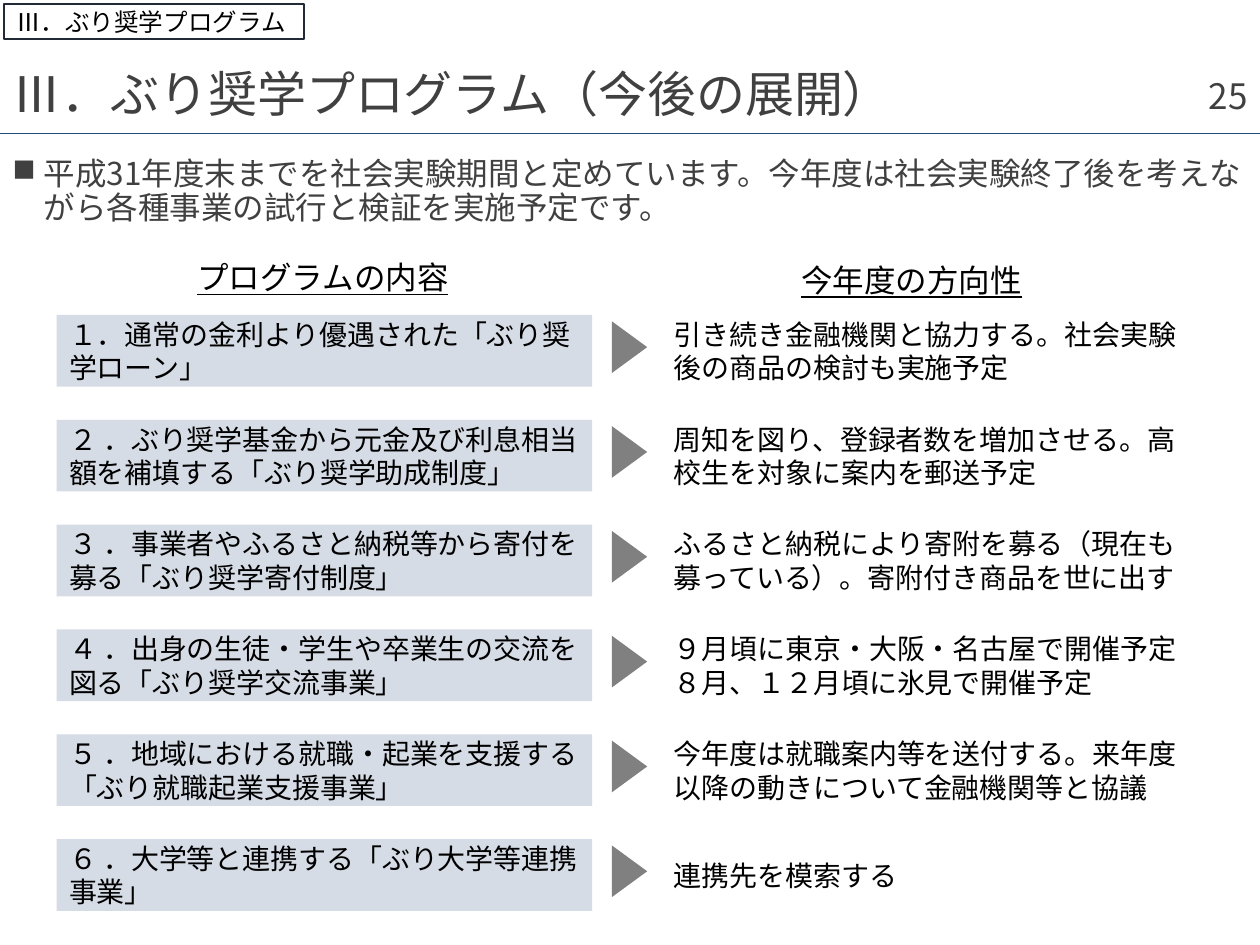
import pptx
import pptx.util
import pptx.dml.color
import pptx.enum.shapes
import pptx.enum.text
import pptx.oxml.ns
from lxml import etree

Pt = pptx.util.Pt
RGB = pptx.dml.color.RGBColor
Kind = pptx.enum.shapes.MSO_SHAPE
Align = pptx.enum.text.PP_ALIGN
Anchor = pptx.enum.text.MSO_ANCHOR
qn = pptx.oxml.ns.qn

FONT = "Noto Sans CJK JP"
BLACK = RGB(0x00, 0x00, 0x00)
WHITE = RGB(0xFF, 0xFF, 0xFF)
DARK = RGB(0x40, 0x40, 0x40)
GRAY = RGB(0x80, 0x80, 0x80)
PALE = RGB(0xD6, 0xDC, 0xE5)
NAVY = RGB(0x22, 0x2A, 0x35)
BLUE = RGB(0x1F, 0x4E, 0x79)


def write(shape, text, size, color=BLACK, anchor=Anchor.MIDDLE, align=Align.LEFT, wrap=True):
    frame = shape.text_frame
    frame.text = text
    frame.word_wrap = wrap
    frame.auto_size = pptx.enum.text.MSO_AUTO_SIZE.NONE
    frame.vertical_anchor = anchor
    for para in frame.paragraphs:
        para.alignment = align
        font = para.font
        font.name, font.size = FONT, Pt(size)
        font.color.rgb = color
        # East Asian typeface
        etree.SubElement(font._element, qn("a:ea"), typeface=FONT)
    return frame.paragraphs[0]


def block(kind, left, top, width, height, fill):
    shape = slide.shapes.add_shape(kind, Pt(left), Pt(top), Pt(width), Pt(height))
    shape.shadow.inherit = False
    shape.fill.solid()
    shape.fill.fore_color.rgb = fill
    shape.line.fill.background()
    return shape


deck = pptx.Presentation()
deck.slide_width, deck.slide_height = Pt(720), Pt(540)
slide = deck.slides.add_slide(deck.slide_layouts[5])

# Title and rule below it
title = slide.shapes.title
title.left, title.top, title.width, title.height = Pt(0), Pt(44.6), Pt(720), Pt(21)
write(title, "Ⅲ．ぶり奨学プログラム（今後の展開）", 28, DARK).line_spacing = 0.9

rule = slide.shapes.add_connector(
    pptx.enum.shapes.MSO_CONNECTOR.STRAIGHT, Pt(0), Pt(76.3), Pt(720), Pt(76.3))
rule.line.color.rgb = BLUE
rule.line.width = Pt(0.5)
etree.SubElement(rule._element.spPr, qn("a:effectLst"))

# Page number
page = slide.shapes.add_textbox(Pt(558), Pt(40.3), Pt(162), Pt(29))
write(page, "25", 20, DARK, align=Align.RIGHT)

# Lead text with square bullet
lead = slide.shapes.add_textbox(Pt(0), Pt(87), Pt(720), Pt(70))
para = write(lead, "平成31年度末までを社会実験期間と定めています。今年度は社会実験終了後を考え"
             "ながら各種事業の試行と検証を実施予定です。", 18, DARK, Anchor.TOP)
para.line_spacing = 0.9
para.space_before = Pt(10)
props = para._p.get_or_add_pPr()
props.set("marL", str(Pt(18)))
props.set("indent", str(-Pt(18)))
mark = etree.Element(qn("a:buChar"), char="■")
props.find(qn("a:defRPr")).addprevious(mark)

# Column heads
for left, top, width, text in [
    (105.8, 144, 160, "プログラムの内容"),
    (450.7, 145.4, 142, "今年度の方向性"),
]:
    head = slide.shapes.add_textbox(Pt(left), Pt(top), Pt(width), Pt(29))
    write(head, text, 18, anchor=Anchor.TOP, wrap=False).font.underline = True

# Rows: program, arrow, direction
rows = [
    ("１．通常の金利より優遇された「ぶり奨学ローン」",
     "引き続き金融機関と協力する。社会実験後の商品の検討も実施予定"),
    ("２ ．ぶり奨学基金から元金及び利息相当額を補填する「ぶり奨学助成制度」",
     "周知を図り、登録者数を増加させる。高校生を対象に案内を郵送予定"),
    ("３ ．事業者やふるさと納税等から寄付を募る「ぶり奨学寄付制度」",
     "ふるさと納税により寄附を募る（現在も募っている）。寄附付き商品を世に出す"),
    ("４ ．出身の生徒・学生や卒業生の交流を図る「ぶり奨学交流事業」",
     "９月頃に東京・大阪・名古屋で開催予定\n８月、１２月頃に氷見で開催予定"),
    ("５ ．地域における就職・起業を支援する「ぶり就職起業支援事業」",
     "今年度は就職案内等を送付する。来年度以降の動きについて金融機関等と協議"),
    ("６ ．大学等と連携する「ぶり大学等連携事業」",
     "連携先を模索する"),
]
for i, (plan, aim) in enumerate(rows):
    top = 180 + 59.9 * i
    write(block(Kind.RECTANGLE, 32.4, top, 306, 41, PALE), plan, 16)
    write(block(Kind.RECTANGLE, 378, top, 306, 41, WHITE), aim, 16)
    arrow = block(Kind.RIGHT_ARROW, 349.6, top + 3.6, 20.2, 29.6, GRAY)
    arrow.adjustments[0] = 0.5
    arrow.adjustments[1] = 1

# Section tag
tag = block(Kind.RECTANGLE, 2.2, 2.2, 171.4, 20.2, WHITE)
tag.line.color.rgb = NAVY
tag.line.width = Pt(1)
write(tag, "Ⅲ．ぶり奨学プログラム", 14)

deck.save("out.pptx")
